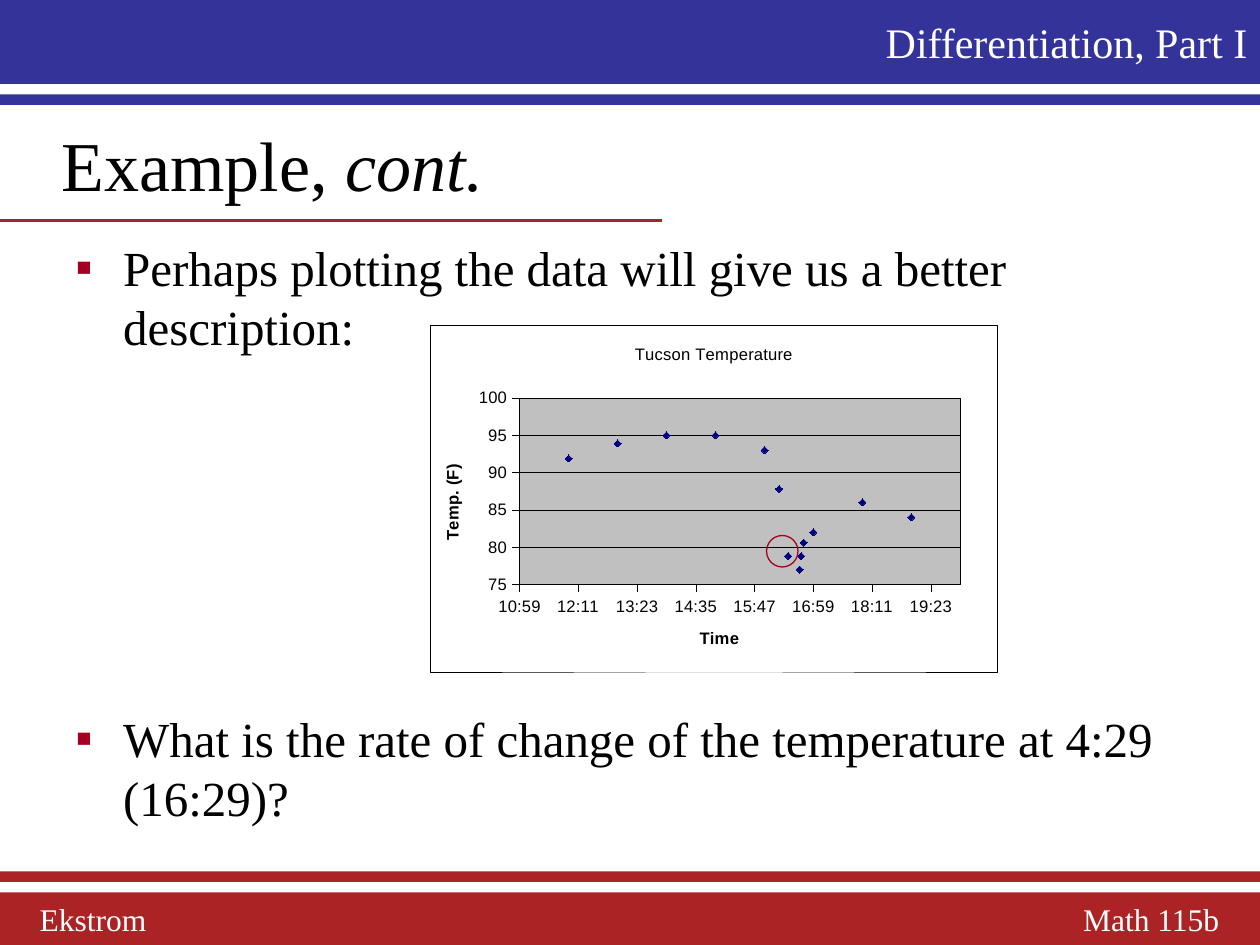
import dataclasses

import lxml.etree
import pptx
import pptx.chart.data
import pptx.dml.color
import pptx.enum.chart
import pptx.enum.shapes
import pptx.enum.text
import pptx.oxml.ns
import pptx.util

COLUMNS, ROWS = 120, 90
CELL = pptx.util.Inches(10) // COLUMNS


@dataclasses.dataclass(frozen=True)
class Theme:
    blue: str = "333399"
    red: str = "AC2325"
    accent: str = "A50021"
    navy: str = "000080"
    grey: str = "C0C0C0"
    black: str = "000000"
    white: str = "FFFFFF"
    serif: str = "Times New Roman"
    sans: str = "Arial"
    title: float = 40
    body: float = 28
    header: float = 24
    footer: float = 18
    chart: float = 9.5
    hairline: float = 0.25


THEME = Theme()
ALIGN = pptx.enum.text.PP_ALIGN
READINGS = [
    (12, 0, 91.9), (13, 0, 93.9), (14, 0, 95), (15, 0, 95), (16, 0, 93),
    (16, 18, 87.8), (16, 29, 78.8), (16, 43, 77), (16, 45, 78.8),
    (16, 48, 80.6), (17, 0, 82), (18, 0, 86), (19, 0, 84),
]


def grid(*cells):
    return [round(cell * CELL) for cell in cells]


def rgb(value):
    return pptx.dml.color.RGBColor.from_string(value)


def add_xml(parent, tag, **attributes):
    child = lxml.etree.SubElement(parent, pptx.oxml.ns.qn(tag))
    for name, value in attributes.items():
        child.set(name, str(value))
    return child


def style_font(font, size, color, face, bold=False):
    font.size = pptx.util.Pt(size)
    font.color.rgb = rgb(color)
    font.name = face
    font.bold = bold


def style_line(line, color, width):
    line.color.rgb = rgb(color)
    line.width = pptx.util.Pt(width)


def add_span(para, text, size, color, italic=False):
    span = para.add_run()
    span.text = text
    style_font(span.font, size, color, THEME.serif)
    span.font.italic = italic


def add_bar(page, top, height, color):
    bar = page.shapes.add_shape(
        pptx.enum.shapes.MSO_SHAPE.RECTANGLE, *grid(0, top, COLUMNS, height))
    bar.shadow.inherit = False
    bar.fill.solid()
    bar.fill.fore_color.rgb = rgb(color)
    bar.line.fill.background()


def add_box(page, left, top, width, height, middle=False):
    box = page.shapes.add_textbox(*grid(left, top, width, height))
    frame = box.text_frame
    frame.word_wrap = True
    if middle:
        frame.vertical_anchor = pptx.enum.text.MSO_ANCHOR.MIDDLE
    return frame


def add_label(page, text, place, size, align):
    para = add_box(page, *place, middle=True).paragraphs[0]
    para.alignment = align
    add_span(para, text, size, THEME.white)


def add_bullet(para, text, gap):
    para.space_before = pptx.util.Pt(gap)
    properties = para._p.get_or_add_pPr()
    indent = pptx.util.Inches(0.38)
    properties.set("marL", str(indent))
    properties.set("indent", str(-indent))
    color = add_xml(properties, "a:buClr")
    add_xml(color, "a:srgbClr", val=THEME.accent)
    add_xml(properties, "a:buFont", typeface=THEME.serif)
    add_xml(properties, "a:buChar", char="▪")
    add_span(para, text, THEME.body, THEME.black)


def add_rule(page, row, length):
    rule = page.shapes.add_connector(
        pptx.enum.shapes.MSO_CONNECTOR.STRAIGHT, *grid(0, row, length, row))
    style_line(rule.line, THEME.red, 2.25)
    add_xml(rule._element.spPr, "a:effectLst")


def add_ring(page, left, top, size):
    ring = page.shapes.add_shape(
        pptx.enum.shapes.MSO_SHAPE.OVAL, *grid(left, top, size, size))
    ring.shadow.inherit = False
    ring.fill.background()
    style_line(ring.line, THEME.accent, 0.75)


def day_share(hour, minute=0):
    return round((hour + minute / 60) / 24, 4)


def paint_area(parent, fill):
    area = add_xml(parent, "c:spPr")
    add_xml(add_xml(area, "a:solidFill"), "a:srgbClr", val=fill)
    line = add_xml(area, "a:ln", w=pptx.util.Pt(THEME.hairline))
    add_xml(add_xml(line, "a:solidFill"), "a:srgbClr", val=THEME.black)
    return area


def place_plot(area, **shares):
    for old in area.findall(pptx.oxml.ns.qn("c:layout")):
        area.remove(old)
    layout = add_xml(area, "c:layout")
    area.insert(0, layout)
    manual = add_xml(layout, "c:manualLayout")
    add_xml(manual, "c:layoutTarget", val="inner")
    for name in ("xMode", "yMode"):
        add_xml(manual, f"c:{name}", val="edge")
    for name, share in shares.items():
        add_xml(manual, f"c:{name}", val=share)


def set_title(owner, text, bold):
    para = owner.text_frame.paragraphs[0]
    span = para.add_run()
    span.text = text
    style_font(span.font, THEME.chart, THEME.black, THEME.sans, bold)


def style_axis(axis, title, low, high, step, number_format):
    axis.minimum_scale, axis.maximum_scale = low, high
    axis.major_unit = step
    axis.major_tick_mark = pptx.enum.chart.XL_TICK_MARK.OUTSIDE
    axis.crosses = pptx.enum.chart.XL_AXIS_CROSSES.MINIMUM
    axis.tick_labels.number_format = number_format
    axis.tick_labels.number_format_is_linked = False
    style_font(axis.tick_labels.font, THEME.chart, THEME.black, THEME.sans)
    style_line(axis.format.line, THEME.black, THEME.hairline)
    set_title(axis.axis_title, title, True)


def add_temperature_chart(page, left, top, width, height):
    data = pptx.chart.data.XyChartData()
    points = data.add_series("Tucson Temperature")
    for hour, minute, degrees in READINGS:
        points.add_data_point(day_share(hour, minute), degrees)
    chart = page.shapes.add_chart(
        pptx.enum.chart.XL_CHART_TYPE.XY_SCATTER,
        *grid(left, top, width, height), data).chart
    style_font(chart.font, THEME.chart, THEME.black, THEME.sans)
    chart.has_legend = False
    set_title(chart.chart_title, "Tucson Temperature", False)
    style_axis(chart.category_axis, "Time", day_share(11), day_share(20), 0.05, "hh:mm")
    style_axis(chart.value_axis, "Temp. (F)", 75, 100, 5, "0")
    chart.category_axis.has_major_gridlines = False
    style_line(chart.value_axis.major_gridlines.format.line, THEME.black, THEME.hairline)
    chart.plots[0].vary_by_categories = False
    series = chart.plots[0].series[0]
    series.format.line.fill.background()
    series.marker.style = pptx.enum.chart.XL_MARKER_STYLE.DIAMOND
    series.marker.size = 4
    series.marker.format.fill.solid()
    series.marker.format.fill.fore_color.rgb = rgb(THEME.navy)
    series.marker.format.line.color.rgb = rgb(THEME.navy)
    space = chart._chartSpace
    place_plot(space.chart.plotArea, x=0.157, y=0.209, w=0.778, h=0.539)
    paint_area(space.chart.plotArea, THEME.grey)
    space.chart.addnext(paint_area(space, THEME.white))


def main():
    deck = pptx.Presentation()
    deck.slide_width, deck.slide_height = grid(COLUMNS, ROWS)
    page = deck.slides.add_slide(deck.slide_layouts[6])
    for top, height, color in [(85, 5, THEME.red), (0, 8, THEME.blue),
                               (9, 1, THEME.blue), (83, 1, THEME.red)]:
        add_bar(page, top, height, color)
    add_label(page, "Differentiation, Part I", (60, 0, 60, 8), THEME.header, ALIGN.RIGHT)
    add_label(page, "Ekstrom", (2.6, 85, 40, 5), THEME.footer, ALIGN.LEFT)
    add_label(page, "Math 115b", (77.3, 85, 40, 5), THEME.footer, ALIGN.RIGHT)
    body = add_box(page, 6, 22, 108, 58.4)
    add_bullet(body.paragraphs[0], "Perhaps plotting the data will give us a better description:", 5.6)
    add_bullet(body.add_paragraph(), "What is the rate of change of the temperature at 4:29 (16:29)?", 202)
    add_rule(page, 21, 63)
    title = add_box(page, 4.7, 11, 107, 9.2).paragraphs[0]
    add_span(title, "Example, ", THEME.title, THEME.black)
    add_span(title, "cont.", THEME.title, THEME.black, italic=True)
    add_temperature_chart(page, 41, 31, 54, 33)
    add_ring(page, 73, 51, 3)
    deck.save("out.pptx")


if __name__ == "__main__":
    main()
